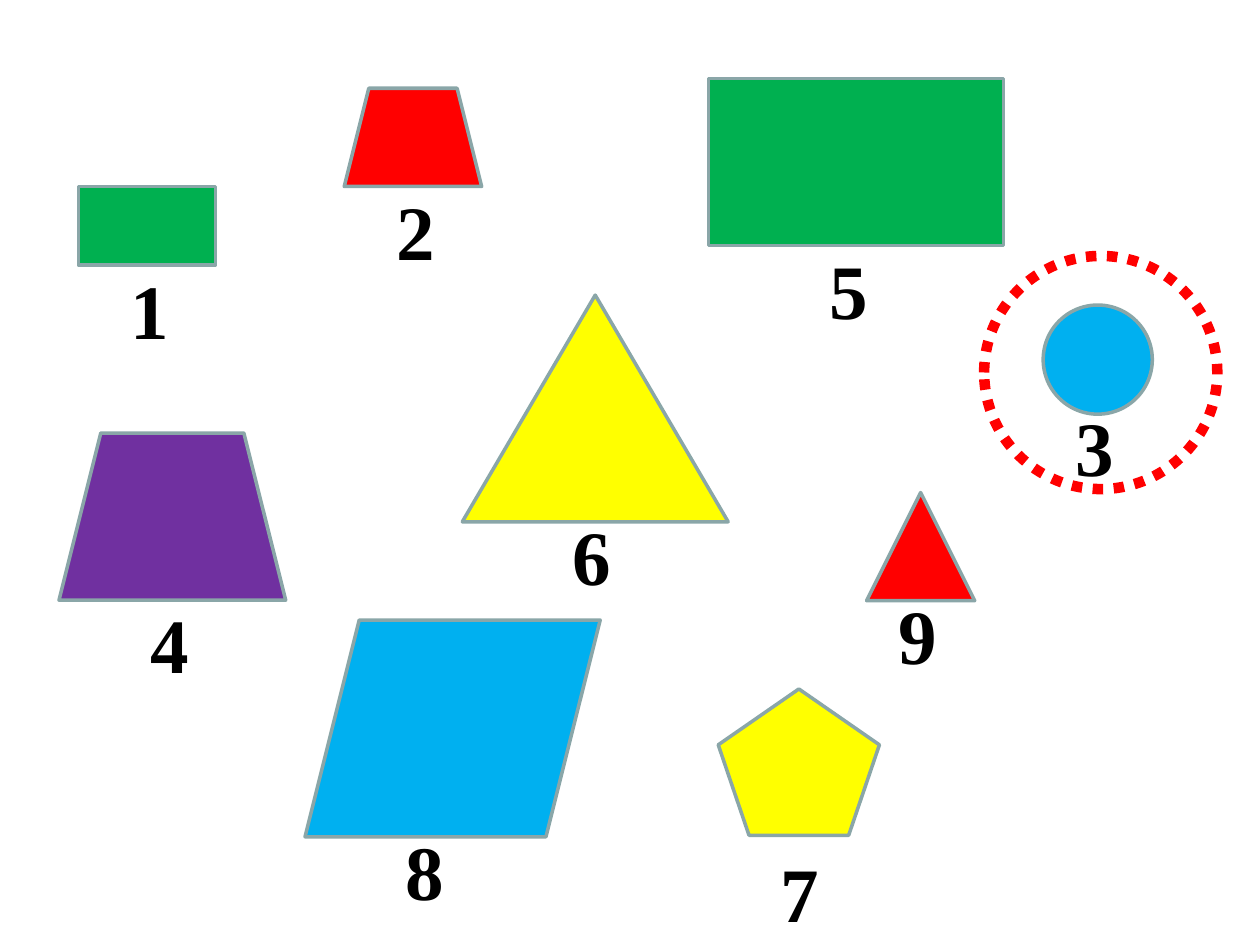
from pptx import Presentation
from pptx.dml.color import RGBColor
from pptx.enum.dml import MSO_LINE
from pptx.enum.shapes import MSO_SHAPE as Preset
from pptx.enum.text import MSO_AUTO_SIZE as AutoSize
from pptx.util import Cm, Pt

GREEN, RED, YELLOW = "00B050", "FF0000", "FFFF00"
BLUE, PURPLE, GREY, BLACK = "00B0F0", "7030A0", "8AA6A8", "000000"


def color(hex_text):
    return RGBColor.from_string(hex_text)


class FigurePage:
    """Holds the style and the current slide."""

    font_name = "Times New Roman"
    font_size = Pt(44)
    label_size = (1.3, 2.13)

    def __init__(self, deck):
        self.page = deck.slides.add_slide(deck.slide_layouts[6])

    def outline(self, preset, bounds, line_color, line_width):
        shape = self.page.shapes.add_shape(preset, *map(Cm, bounds))
        shape.shadow.inherit = False
        shape.fill.background()
        shape.line.color.rgb = color(line_color)
        shape.line.width = Pt(line_width)
        return shape

    def figure(self, preset, bounds, fill_color):
        shape = self.outline(preset, bounds, GREY, 2)
        shape.fill.solid()
        shape.fill.fore_color.rgb = color(fill_color)

    def dotted_ring(self, bounds):
        ring = self.outline(Preset.OVAL, bounds, RED, 6)
        ring.line.dash_style = MSO_LINE.ROUND_DOT  # written as sysDot

    def label(self, number, position):
        box = self.page.shapes.add_textbox(*map(Cm, position + self.label_size))
        frame = box.text_frame
        frame.word_wrap = False
        frame.auto_size = AutoSize.SHAPE_TO_FIT_TEXT
        para = frame.paragraphs[0]
        para.text = str(number)
        para.font.name = self.font_name
        para.font.size = self.font_size
        para.font.bold = True
        para.font.color.rgb = color(BLACK)


# Figures: preset, (left, top, width, height) in cm, fill
FIGURES = [
    (Preset.FLOWCHART_CONNECTOR, (21.03, 6.15, 2.2, 2.2), BLUE),
    (Preset.RECTANGLE, (1.58, 3.76, 2.77, 1.58), GREEN),
    (Preset.RECTANGLE, (14.28, 1.58, 5.95, 3.37), GREEN),
    (Preset.ISOSCELES_TRIANGLE, (17.47, 9.93, 2.18, 2.18), RED),
    (Preset.ISOSCELES_TRIANGLE, (9.32, 5.95, 5.36, 4.57), YELLOW),
    (Preset.TRAPEZOID, (6.94, 1.78, 2.77, 1.98), RED),
    (Preset.PARALLELOGRAM, (6.15, 12.5, 5.95, 4.37), BLUE),
    (Preset.REGULAR_PENTAGON, (14.48, 13.89, 3.25, 2.95), YELLOW),
    (Preset.TRAPEZOID, (1.19, 8.73, 4.57, 3.37), PURPLE),
]

# Left and top of the labels 1 to 9, in cm
LABEL_POSITIONS = [
    (2.38, 5.16), (7.75, 3.58), (21.43, 7.93),
    (2.78, 11.91), (16.47, 4.77), (11.3, 10.12),
    (15.48, 16.92), (7.93, 16.47), (17.86, 11.71),
]


def main():
    deck = Presentation()
    deck.slide_width, deck.slide_height = Cm(25.4), Cm(19.05)
    page = FigurePage(deck)

    for preset, bounds, fill_color in FIGURES:
        page.figure(preset, bounds, fill_color)

    for number, position in enumerate(LABEL_POSITIONS, start=1):
        page.label(number, position)

    # Ring around the blue circle
    page.dotted_ring((19.84, 5.16, 4.7, 4.7))

    deck.save("out.pptx")


if __name__ == "__main__":
    main()
